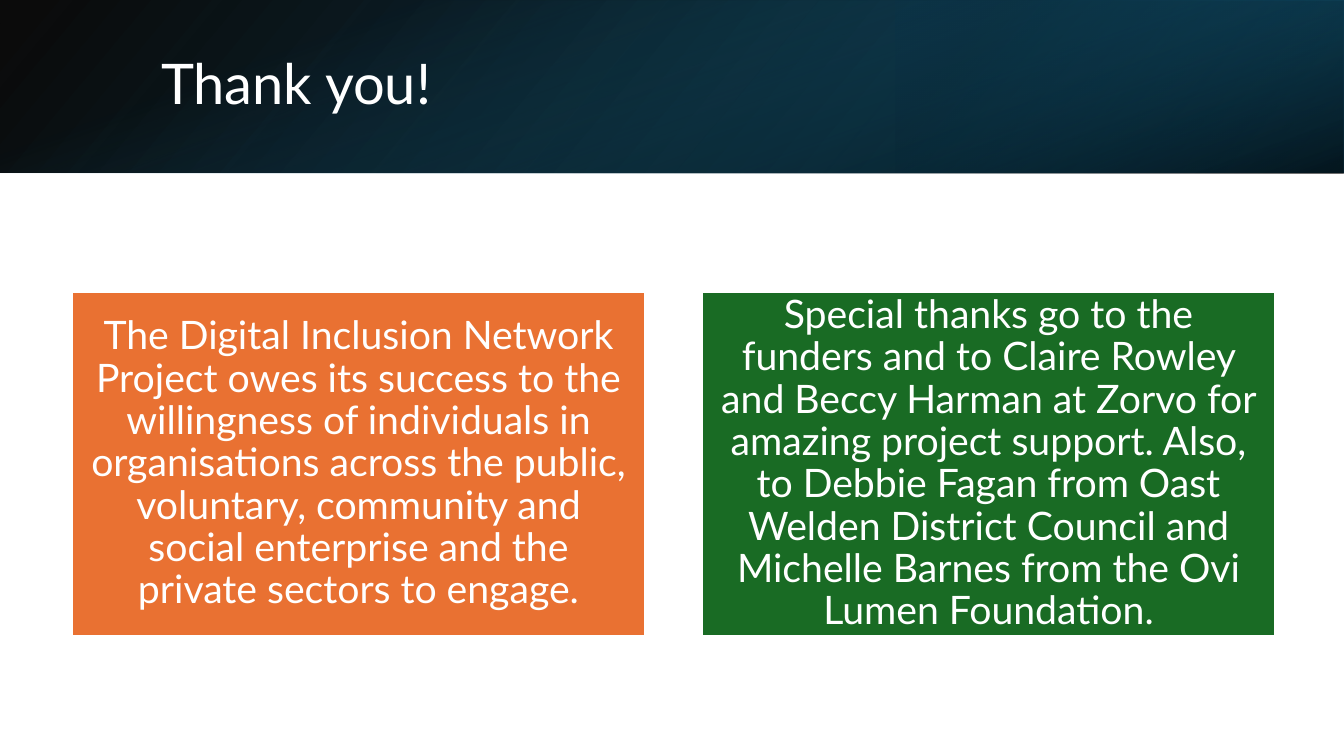
from lxml import etree
from pptx import Presentation
from pptx import util as u
from pptx.dml.color import RGBColor
from pptx.enum import shapes, text
from pptx.oxml.ns import qn

SCALE = 914400 / 100.8
WIDTH, HEIGHT = 1344, 756
BANNER_HEIGHT = 173

MESSAGES = [
    ("E97132", "The Digital Inclusion Network Project owes its success to the "
     "willingness of individuals in organisations across the public, voluntary, "
     "community and social enterprise and the private sectors to engage."),
    ("196B24", "Special thanks go to the funders and to Claire Rowley and Beccy "
     "Harman at Zorvo for amazing project support. Also, to Debbie Fagan from Oast "
     "Welden District Council and Michelle Barnes from the Ovi Lumen Foundation."),
]


def px(length):
    return u.Emu(round(length * SCALE))


def color(value):
    return RGBColor.from_string(value)


def write_text(shape, content, font="Lato", size=28, fill="FFFFFF",
               align=text.PP_ALIGN.LEFT, inset=None, space_after=0):
    frame = shape.text_frame
    frame.word_wrap = True
    frame.auto_size = text.MSO_AUTO_SIZE.NONE
    frame.vertical_anchor = text.MSO_ANCHOR.MIDDLE
    if inset is not None:
        frame.margin_left = frame.margin_right = px(inset)
        frame.margin_top = frame.margin_bottom = px(inset)
    paragraph = frame.paragraphs[0]
    paragraph.alignment = align
    paragraph.line_spacing = 0.9
    paragraph.space_after = u.Pt(space_after)
    run = paragraph.add_run()
    run.text = content
    run.font.name = font
    run.font.size = u.Pt(size)
    run.font.color.rgb = color(fill)


class SlideBuilder:
    def __init__(self, presentation, font="Lato"):
        self.slide = presentation.slides.add_slide(presentation.slide_layouts[5])
        self.font = font

    def rectangle(self, left, top, width, height):
        shape = self.slide.shapes.add_shape(
            shapes.MSO_SHAPE.RECTANGLE, px(left), px(top), px(width), px(height))
        shape.shadow.inherit = False
        return shape

    def gradient(self, box, stops, angle, rotation=0, flip=False):
        shape = self.rectangle(*box)
        shape.line.fill.background()
        shape.rotation = rotation
        properties = shape.element.spPr
        if flip:
            properties.find(qn("a:xfrm")).set("flipH", "1")
        gradient = etree.Element(qn("a:gradFill"))
        stop_list = etree.SubElement(gradient, qn("a:gsLst"))
        for position, value, opacity in stops:
            stop = etree.SubElement(stop_list, qn("a:gs"), pos=str(position * 1000))
            stop_color = etree.SubElement(stop, qn("a:srgbClr"), val=value)
            etree.SubElement(stop_color, qn("a:alpha"), val=str(opacity * 1000))
        etree.SubElement(gradient, qn("a:lin"), ang=str(angle * 60000), scaled="0")
        properties.find(qn("a:prstGeom")).addnext(gradient)

    def title(self, box, content):
        shape = self.slide.shapes.title
        shape.left, shape.top, shape.width, shape.height = map(px, box)
        write_text(shape, content, font=self.font, size=40)
        tree = shape.element.getparent()
        tree.append(shape.element)

    def card(self, box, fill, content):
        shape = self.rectangle(*box)
        shape.fill.solid()
        shape.fill.fore_color.rgb = color(fill)
        shape.line.color.rgb = color("FFFFFF")
        shape.line.width = u.Pt(1.5)
        write_text(shape, content, font=self.font, align=text.PP_ALIGN.CENTER,
                   inset=12, space_after=10)


def main():
    presentation = Presentation()
    presentation.slide_width, presentation.slide_height = px(WIDTH), px(HEIGHT)
    builder = SlideBuilder(presentation)

    builder.gradient((0, 0, WIDTH, BANNER_HEIGHT),
                     [(0, "000000", 96), (100, "104862", 100)], 140, flip=True)
    builder.gradient((WIDTH * 2 // 3, 0, WIDTH // 3, BANNER_HEIGHT),
                     [(19, "0B3041", 68), (100, "156082", 79)], 320,
                     rotation=180, flip=True)
    offset = (WIDTH - BANNER_HEIGHT) // 2
    builder.gradient((offset, -offset, BANNER_HEIGHT, WIDTH),
                     [(23, "156082", 0), (99, "000000", 74)], 340, rotation=90)

    builder.title((151, 38, 1107, 97), "Thank you!")
    for index, (fill, message) in enumerate(MESSAGES):
        builder.card((72 + index * 630, 292, 573, 344), fill, message)

    presentation.save("out.pptx")


if __name__ == "__main__":
    main()
